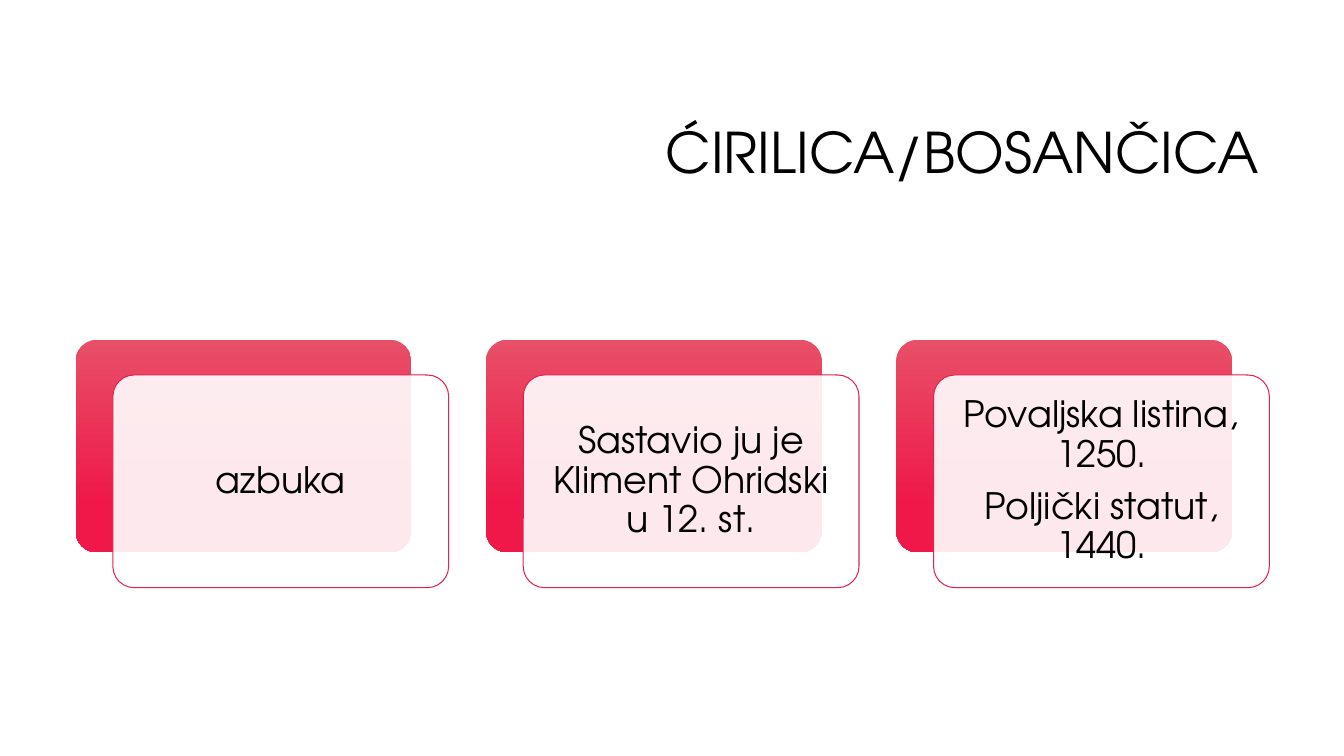
import pptx
import pptx.dml.color
import pptx.enum.shapes
import pptx.enum.text
import pptx.oxml
import pptx.oxml.ns
import pptx.util
from pptx.util import Inches

FONT = "TeX Gyre Adventor"
CARDS = [
    ["azbuka"],
    ["Sastavio ju je Kliment Ohridski u 12. st."],
    ["Povaljska listina, 1250.", "Poljički statut, 1440."],
]


def rgb(value):
    """Turn a hex string into a colour."""
    return pptx.dml.color.RGBColor.from_string(value)


def write_text(shape, lines, size, alignment, space_after=0):
    """Fill a shape with vertically centred black paragraphs."""
    frame = shape.text_frame
    frame.word_wrap = True
    frame.vertical_anchor = pptx.enum.text.MSO_ANCHOR.MIDDLE
    frame.text = "\n".join(lines)
    for paragraph in frame.paragraphs:
        paragraph.alignment = alignment
        paragraph.line_spacing = 0.9
        paragraph.space_after = pptx.util.Pt(space_after)
        paragraph.font.name = FONT
        paragraph.font.size = pptx.util.Pt(size)
        paragraph.font.color.rgb = rgb("000000")


def add_title(slide, left, top, width, height, text):
    """Place the right-aligned slide title."""
    title = slide.shapes.add_textbox(Inches(left), Inches(top), Inches(width), Inches(height))
    write_text(title, [text], 40, pptx.enum.text.PP_ALIGN.RIGHT)


def add_rounded_panel(slide, left, top, width, height):
    """Add a rounded rectangle without shadow."""
    panel = slide.shapes.add_shape(
        pptx.enum.shapes.MSO_SHAPE.ROUNDED_RECTANGLE,
        Inches(left), Inches(top), Inches(width), Inches(height))
    panel.adjustments[0] = 0.1
    panel.shadow.inherit = False
    return panel


def add_card(slide, left, top, width, height, lines):
    """Place a red gradient panel with a translucent text panel offset over it."""
    back = add_rounded_panel(slide, left, top, width, height)
    back.fill.gradient()
    back.fill.gradient_angle = 270
    for stop, position, color in zip(back.fill.gradient_stops, (0, 0.78), ("E84F68", "EF1849")):
        stop.position = position
        stop.color.rgb = rgb(color)
    back.line.fill.background()

    front = add_rounded_panel(slide, left + 0.37, top + 0.35, width, height)
    front.fill.solid()
    front.fill.fore_color.rgb = rgb("FFFFFF")
    white = front.fill._xPr.find(".//" + pptx.oxml.ns.qn("a:srgbClr"))
    white.append(pptx.oxml.parse_xml(
        f'<a:alpha {pptx.oxml.ns.nsdecls("a")} val="90000"/>'))
    front.line.color.rgb = rgb("E5224E")
    front.line.width = pptx.util.Pt(0.75)
    frame = front.text_frame
    frame.margin_left = frame.margin_right = Inches(0.11)
    frame.margin_top = frame.margin_bottom = Inches(0.11)
    write_text(front, lines, 26, pptx.enum.text.PP_ALIGN.CENTER, 9)


def add_card_row(slide, left, top, width, height, pitch):
    """Place the cards side by side at an equal pitch."""
    for index, lines in enumerate(CARDS):
        add_card(slide, left + index * pitch, top, width, height, lines)


def main():
    """Build and save the presentation."""
    presentation = pptx.Presentation()
    presentation.slide_width = Inches(13.33)
    presentation.slide_height = Inches(7.5)
    slide = presentation.slides.add_slide(presentation.slide_layouts[6])
    add_title(slide, 3.17, 0.84, 9.42, 1.41, "ĆIRILICA/BOSANČICA")
    add_card_row(slide, 0.75, 3.37, 3.33, 2.11, 4.07)
    presentation.save("out.pptx")


if __name__ == "__main__":
    main()
